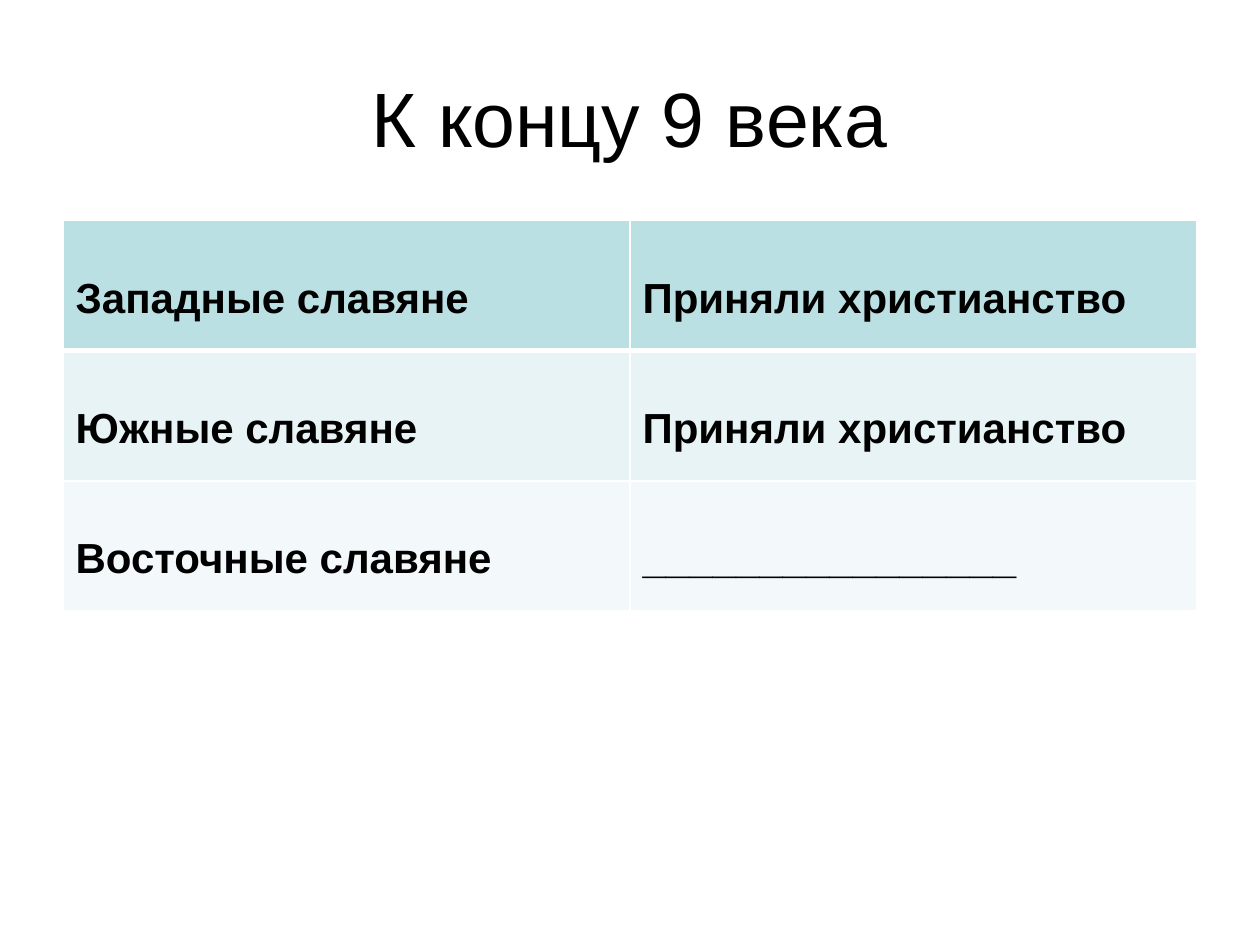
from lxml import etree
from pptx import Presentation
from pptx.dml.color import RGBColor
from pptx.enum.text import MSO_ANCHOR, PP_ALIGN
from pptx.oxml.ns import qn
from pptx.util import Pt

# Content
TITLE = "К концу 9 века"
BLACK = RGBColor(0x00, 0x00, 0x00)
WHITE = RGBColor(0xFF, 0xFF, 0xFF)
TEAL = RGBColor(0xBB, 0xE0, 0xE3)
LIGHT_TEAL = RGBColor(0xE7, 0xF3, 0xF4)
PALE_TEAL = RGBColor(0xF3, 0xF9, 0xFA)
SLAVS = [
    (TEAL, "Западные славяне", "Приняли христианство"),
    (LIGHT_TEAL, "Южные славяне", "Приняли христианство"),
    (PALE_TEAL, "Восточные славяне", "________________"),
]

# Layout, in points
LEFT, WIDTH = 36, 648
TITLE_TOP, TITLE_HEIGHT = 21.6, 90
TABLE_TOP, ROW_HEIGHT = 126, 74.4
CELL_TOP_MARGIN = 31.2
THIN, THICK = 1, 3


def write(frame, text, size, bold=False, align=PP_ALIGN.LEFT):
    paragraph = frame.paragraphs[0]
    paragraph.alignment = align
    run = paragraph.add_run()
    run.text = text
    run.font.name = "Arial"
    run.font.size = Pt(size)
    run.font.bold = bold
    run.font.color.rgb = BLACK


def set_borders(cell, **widths):
    """Draw white borders; the schema wants L, R, T, B ahead of the fill."""
    properties = cell._tc.get_or_add_tcPr()
    for index, side in enumerate("LRTB"):
        line = etree.Element(qn(f"a:ln{side}"), w=str(Pt(widths.get(side, THIN))))
        fill = etree.SubElement(line, qn("a:solidFill"))
        etree.SubElement(fill, qn("a:srgbClr"), val=str(WHITE))
        properties.insert(index, line)


presentation = Presentation()
presentation.slide_width, presentation.slide_height = Pt(720), Pt(540)
slide = presentation.slides.add_slide(presentation.slide_layouts[6])

# Title
title = slide.shapes.add_textbox(Pt(LEFT), Pt(TITLE_TOP), Pt(WIDTH), Pt(TITLE_HEIGHT))
title.text_frame.word_wrap = True
title.text_frame.vertical_anchor = MSO_ANCHOR.MIDDLE
write(title.text_frame, TITLE, 44, align=PP_ALIGN.CENTER)

# Table: columns and rows share the space equally
table = slide.shapes.add_table(
    len(SLAVS), 2, Pt(LEFT), Pt(TABLE_TOP), Pt(WIDTH), Pt(ROW_HEIGHT * len(SLAVS))
).table
for row, (color, *texts) in enumerate(SLAVS):
    table.rows[row].height = Pt(ROW_HEIGHT)
    for column, text in enumerate(texts):
        cell = table.cell(row, column)
        cell.margin_top = Pt(CELL_TOP_MARGIN)
        cell.fill.solid()
        cell.fill.fore_color.rgb = color
        write(cell.text_frame, text, 24, bold=True)
        # A thick rule parts the first row from the rest
        set_borders(cell, T=THICK if row == 1 else THIN, B=THICK if row == 0 else THIN)

presentation.save("out.pptx")
